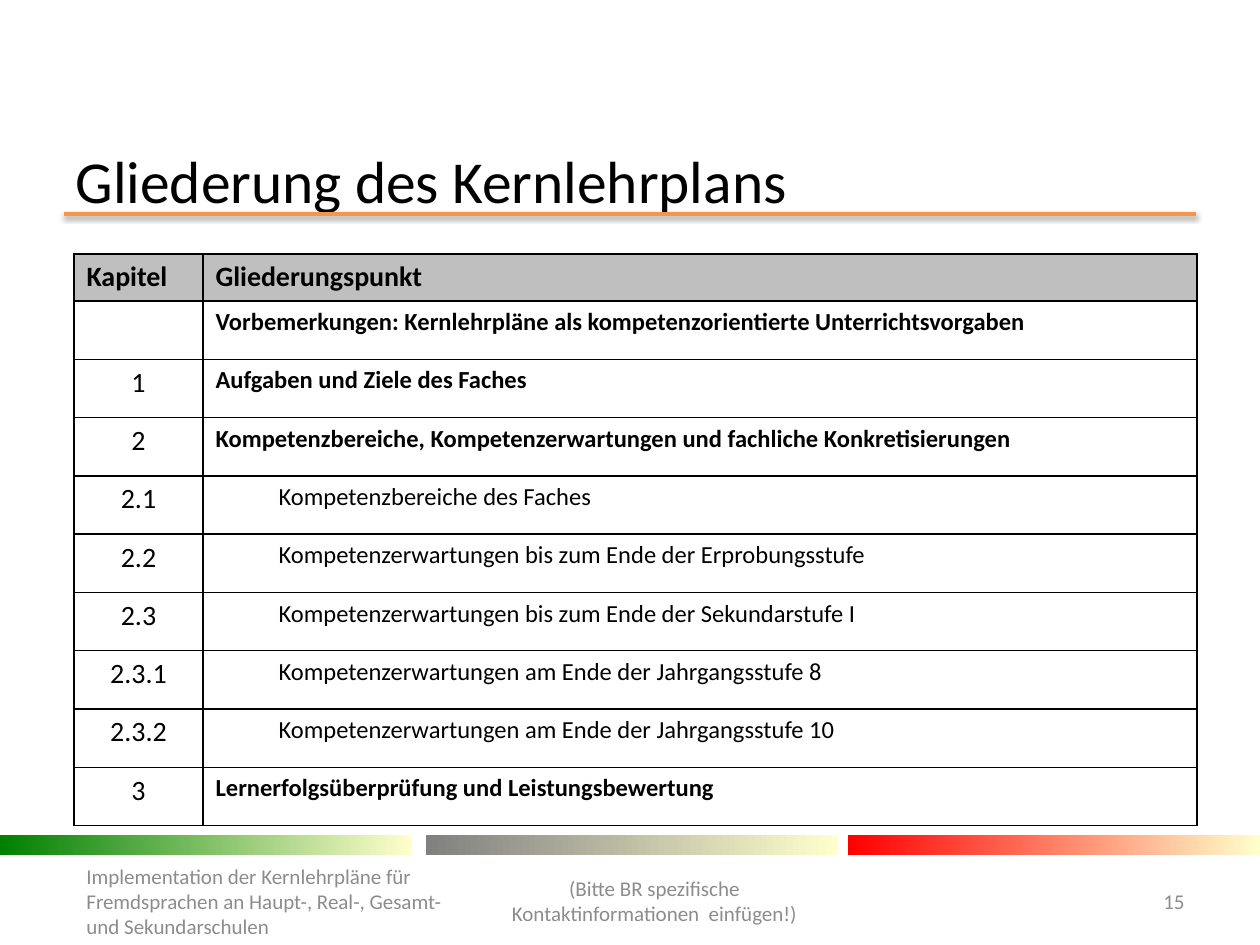
from lxml import etree
from pptx import Presentation
from pptx import util as u
from pptx.dml.color import RGBColor
from pptx.enum import shapes, text
from pptx.oxml import parse_xml
from pptx.oxml.ns import nsdecls, qn

COLORS = {
    "black": "000000", "footer": "8C8C8C", "header": "BFBFBF", "white": "FFFFFF",
    "rule": "F79646", "green": "008000", "gray": "808080", "red": "FF0000",
    "cream": "FFFFCC",
}
FONT = "Calibri"


def px(value):
    return u.Emu(round(value * 914400 / 126))


def format_paragraph(paragraph, size, color, bold=False, align=text.PP_ALIGN.LEFT):
    paragraph.alignment = align
    for run in paragraph.runs:
        run.font.name = FONT
        run.font.size = u.Pt(size)
        run.font.bold = bold
        run.font.color.rgb = RGBColor.from_string(COLORS[color])


presentation = Presentation()
presentation.slide_width, presentation.slide_height = px(1260), px(945)
slide = presentation.slides.add_slide(presentation.slide_layouts[5])

# Rule below the title
rule = slide.shapes.add_connector(
    shapes.MSO_CONNECTOR.STRAIGHT, px(64), px(214), px(1196), px(214))
rule.line.color.rgb = RGBColor.from_string(COLORS["rule"])
rule.line.width = u.Pt(2)
rule._element.spPr.append(parse_xml(
    f'<a:effectLst {nsdecls("a")}>'
    '<a:outerShdw blurRad="40000" dist="20000" dir="5400000" rotWithShape="0">'
    f'<a:srgbClr val="{COLORS["black"]}"><a:alpha val="38000"/></a:srgbClr>'
    '</a:outerShdw></a:effectLst>'))

# Gradient bars above the footer
for left, color in [(0, "green"), (426, "gray"), (848, "red")]:
    bar = slide.shapes.add_shape(
        shapes.MSO_SHAPE.RECTANGLE, px(left), px(835), px(412), px(20))
    bar.shadow.inherit = False
    bar.line.fill.background()
    bar.fill.gradient()
    bar.fill.gradient_angle = 0
    for stop, name in zip(bar.fill.gradient_stops, (color, "cream")):
        stop.color.rgb = RGBColor.from_string(COLORS[name])

# Title
title = slide.shapes.title
title.left, title.top, title.width, title.height = px(63), px(155), px(1134), px(49)
title.text_frame.text = "Gliederung des Kernlehrplans"
title.text_frame.auto_size = text.MSO_AUTO_SIZE.NONE
title.text_frame.vertical_anchor = text.MSO_ANCHOR.MIDDLE
format_paragraph(title.text_frame.paragraphs[0], 34, "black")

# Table of chapters
chapters = [
    ("Kapitel", "Gliederungspunkt"),
    ("", "Vorbemerkungen: Kernlehrpläne als kompetenzorientierte Unterrichtsvorgaben"),
    ("1", "Aufgaben und Ziele des Faches"),
    ("2", "Kompetenzbereiche, Kompetenzerwartungen und fachliche Konkretisierungen"),
    ("2.1", "Kompetenzbereiche des Faches"),
    ("2.2", "Kompetenzerwartungen bis zum Ende der Erprobungsstufe"),
    ("2.3", "Kompetenzerwartungen bis zum Ende der Sekundarstufe I"),
    ("2.3.1", "Kompetenzerwartungen am Ende der Jahrgangsstufe 8"),
    ("2.3.2", "Kompetenzerwartungen am Ende der Jahrgangsstufe 10"),
    ("3", "Lernerfolgsüberprüfung und Leistungsbewertung"),
]
table = slide.shapes.add_table(
    len(chapters), 2, px(74), px(254), px(1123), px(572)).table
table.columns[0].width, table.columns[1].width = px(129), px(994)
for row_index, chapter in enumerate(chapters):
    is_header = row_index == 0
    is_section = "." in chapter[0]
    table.rows[row_index].height = px(47) if is_header else px(525 / 9)
    for column, content in enumerate(chapter):
        cell = table.cell(row_index, column)
        cell.text_frame.text = content
        paragraph = cell.text_frame.paragraphs[0]
        if is_header:
            format_paragraph(paragraph, 16, "black", bold=True)
        elif column == 0:
            format_paragraph(paragraph, 16, "black", align=text.PP_ALIGN.CENTER)
        else:
            format_paragraph(paragraph, 14, "black", bold=not is_section)
            if is_section:
                paragraph.level = 1
                paragraph._p.get_or_add_pPr().set("marL", str(px(63)))

        properties = cell._tc.get_or_add_tcPr()
        for side in ("lnL", "lnR", "lnT", "lnB"):
            border = etree.SubElement(properties, qn(f"a:{side}"), w=str(u.Pt(1)))
            fill = etree.SubElement(border, qn("a:solidFill"))
            etree.SubElement(fill, qn("a:srgbClr"), val=COLORS["black"])
        cell.fill.solid()
        cell.fill.fore_color.rgb = RGBColor.from_string(
            COLORS["header" if is_header else "white"])

# Footer
footers = [
    (74, 858, 397, 86, text.PP_ALIGN.LEFT,
     "Implementation der Kernlehrpläne für Fremdsprachen an Haupt-, Real-, "
     "Gesamt- und Sekundarschulen"),
    (471, 856, 367, 89, text.PP_ALIGN.CENTER,
     "(Bitte BR spezifische Kontaktinformationen  einfügen!)"),
    (1116, 876, 81, 50, text.PP_ALIGN.RIGHT, "15"),
]
for left, top, width, height, align, content in footers:
    footer = slide.shapes.add_textbox(px(left), px(top), px(width), px(height))
    frame = footer.text_frame
    frame.word_wrap = True
    frame.vertical_anchor = text.MSO_ANCHOR.MIDDLE
    frame.text = content
    format_paragraph(frame.paragraphs[0], 12, "footer", align=align)

presentation.save("out.pptx")
